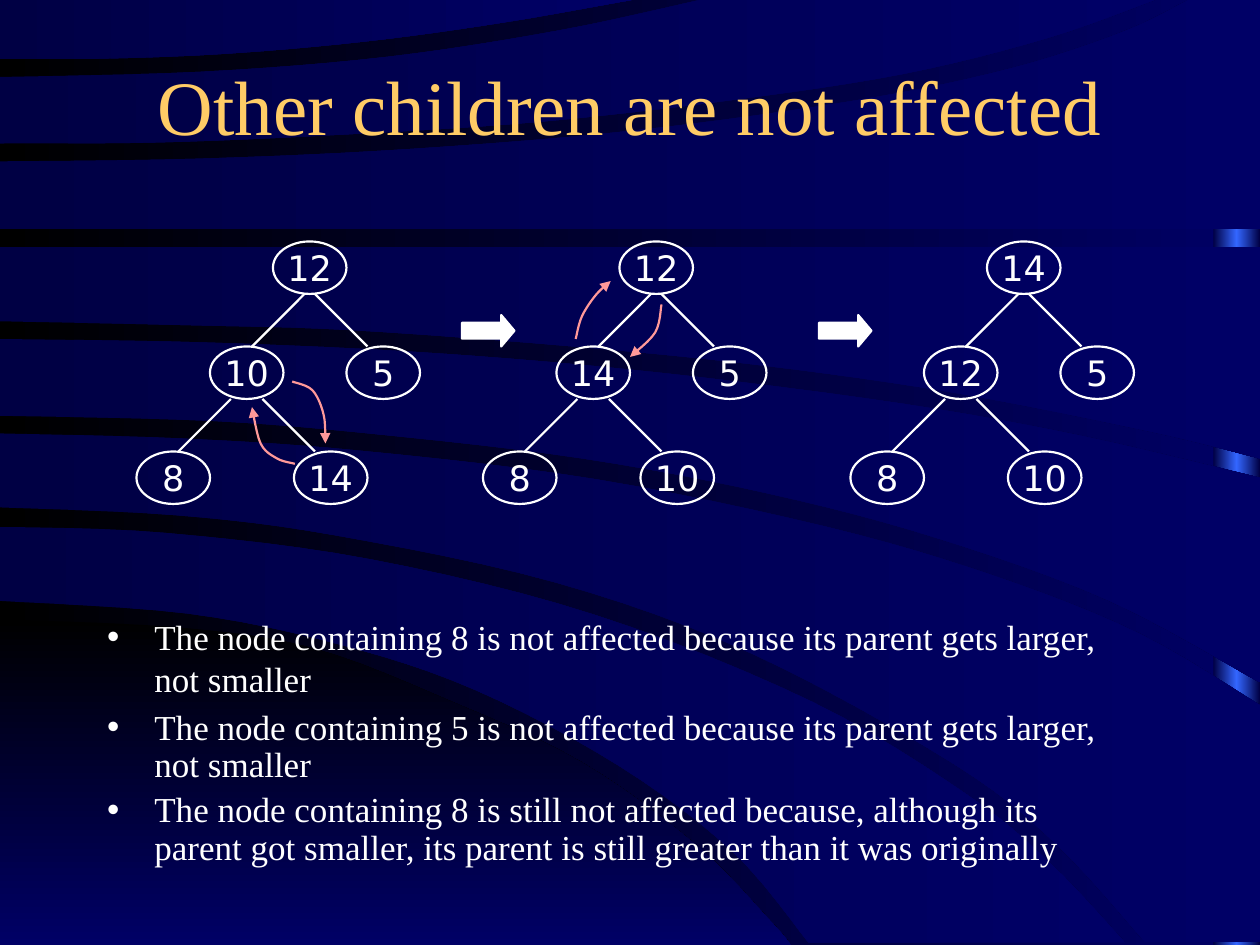
from copy import deepcopy
from lxml.etree import SubElement
from pptx import Presentation
from pptx.dml.color import RGBColor as RGB
from pptx.enum.shapes import MSO_CONNECTOR as LINK, MSO_SHAPE as FORM
from pptx.enum.text import MSO_ANCHOR as ANCHOR, MSO_AUTO_SIZE as FIT, PP_ALIGN as ALIGN
from pptx.oxml.ns import qn
from pptx.util import Pt

BLACK = RGB(0x00, 0x00, 0x00)
NAVY = RGB(0x00, 0x00, 0x44)
BLUE = RGB(0x00, 0x00, 0x66)
GLOW = RGB(0x33, 0x66, 0xFF)
GOLD = RGB(0xFF, 0xCC, 0x66)
PINK = RGB(0xFF, 0x99, 0x99)
WHITE = RGB(0xFF, 0xFF, 0xFF)

# Each band is a list of edges; an edge is a smooth run of points.
HILL = [
    [(0, 354), (100, 358.5), (179, 370.5), (260, 401.8), (333, 436),
     (398, 483), (440, 526), (452, 540)],
    [(0, 540)],
]
BANDS = [
    [[(0, 301), (94, 304.5), (212, 319.7), (340, 351.4), (464, 401),
      (552, 453.6), (600, 493), (643, 538.6)],
     [(462, 538.6), (419, 487), (354, 437.8), (271, 394), (193, 368),
      (107, 350.6), (0, 343.4)]],
    [[(0, 247.7), (104, 250.6), (208, 257.8), (341, 274), (472, 301),
      (568, 329), (651, 362), (720, 403)],
     [(720, 538.6)],
     [(654.5, 538.6), (603, 482), (544, 436), (430, 373.7), (318, 333),
      (192, 306), (101, 294.5), (0, 290)]],
    [[(0, 193.7), (121, 195.8), (251, 202), (377, 213), (514, 230.4),
      (618, 249), (720, 273)],
     [(720, 390), (634, 343.4), (535, 307.4), (439, 282), (333, 262),
      (218, 248.4), (120, 240.5), (0, 237.6)]],
    [[(0, 141), (720, 141)],
     [(720, 262), (659, 247), (546, 224.6), (437, 209), (328, 198),
      (200, 188.6), (106, 185.8), (0, 183.6)]],
    [[(0, 92.2), (113, 90.7), (237, 85), (366, 74.2), (492, 56.9),
      (578, 38.9), (642, 18), (679, 0)],
     [(720, 0)], [(720, 131)], [(0, 131)]],
    [[(0, 44), (115, 41), (222, 32.4), (320, 17.3), (400, 0)],
     [(660, 0), (598, 22), (515, 42.5), (415, 57.6), (306, 69.8),
      (194, 77), (91, 81.4), (0, 82)]],
    [[(0, 0)],
     [(361, 0), (287, 13), (208, 23.8), (125, 31), (48, 33.8), (0, 33.8)]],
]

# Left and top of each node, and the ends of each link, within a tree.
SPOTS = [(78, 0), (42, 60), (120, 60), (0, 120), (90, 120)]
LINKS = [(96, 30, 66, 60), (102, 30, 132, 60), (54, 90, 24, 120), (72, 90, 102, 120)]
TREES = [(78, (12, 10, 5, 8, 14)), (276, (12, 14, 5, 8, 10)), (486, (14, 12, 5, 8, 10))]
SWAPS = [
    [[(168.5, 265), (158.4, 262), (149, 253.5), (144, 232.6)],
     [(167, 218), (178.6, 223), (185, 237), (186, 253.4)]],
    [[(329, 193.7), (332.6, 180.7), (340.6, 168.5), (349, 160.6)],
     [(378, 174), (374.4, 190), (360, 204)]],
]


def smooth(knots, steps=6):
    """Points on a Catmull-Rom curve through the knots."""
    ends = [knots[0], *knots, knots[-1]]
    out = [knots[0]]
    for a, b, c, d in zip(ends, ends[1:], ends[2:], ends[3:]):
        for n in range(1, steps + 1):
            t = n / steps
            out.append(tuple(
                (2 * q + (r - p) * t + (2 * p - 5 * q + 4 * r - s) * t**2
                 + (3 * q - p - 3 * r + s) * t**3) / 2
                for p, q, r, s in zip(a, b, c, d)))
    return out


def blend(fill, *hues, angle=0):
    """Fill with evenly spaced gradient stops."""
    fill.gradient()
    fill.gradient_angle = angle
    stops = fill._xPr.find(".//" + qn("a:gsLst"))
    while len(stops) < len(hues):
        stops.append(deepcopy(stops[0]))
    for n, (stop, hue) in enumerate(zip(fill.gradient_stops, hues)):
        stop.color.rgb = hue
        stop.position = n / (len(hues) - 1)


class Deck:
    serif, sans = "Times New Roman", "DejaVu Sans"
    size, weight = Pt(20), Pt(1.25)

    def __init__(self, slide):
        self.slide = slide
        self.area = slide.shapes

    def group(self):
        """Send the next elements to a new group."""
        self.area = self.slide.shapes.add_group_shape().shapes

    def ungroup(self):
        self.area = self.slide.shapes

    def pen(self, line, hue=WHITE):
        line.color.rgb = hue
        line.width = self.weight

    def shape(self, form, x, y, w, h):
        item = self.area.add_shape(form, Pt(x), Pt(y), Pt(w), Pt(h))
        item.shadow.inherit = False
        return item

    def trace(self, points, close):
        first, *rest = [(Pt(x), Pt(y)) for x, y in points]
        pen = self.area.build_freeform(*first)
        pen.add_line_segments(rest, close=close)
        item = pen.convert_to_shape()
        item.shadow.inherit = False
        return item

    def band(self, edges, *hues, angle=0):
        item = self.trace([p for edge in edges for p in smooth(edge)], True)
        blend(item.fill, *hues, angle=angle)
        item.line.fill.background()

    def stripe(self):
        item = self.shape(FORM.RECTANGLE, 693.4, 0, 26.6, 540)
        blend(item.fill, NAVY, GLOW, NAVY)
        item.line.fill.background()

    def place(self, slot, x, y, w, h):
        """Move a placeholder and bring it to the front."""
        item = self.slide.placeholders[slot]
        item.left, item.top, item.width, item.height = Pt(x), Pt(y), Pt(w), Pt(h)
        self.slide.shapes._spTree.append(item._element)
        item.text_frame.auto_size = FIT.NONE
        return item.text_frame

    def style(self, para, hue, face, size):
        para.font.name, para.font.size, para.font.color.rgb = face, size, hue

    def title(self, text, *box):
        frame = self.place(0, *box)
        frame.text = text
        frame.vertical_anchor = ANCHOR.MIDDLE
        para = frame.paragraphs[0]
        para.alignment = ALIGN.CENTER
        self.style(para, GOLD, self.serif, Pt(44))

    def bullets(self, slot, lines, space, *box):
        frame = self.place(slot, *box)
        frame.text = "\n".join(lines)
        for para in frame.paragraphs:
            self.style(para, WHITE, self.serif, self.size)
            para.space_before, para.line_spacing = Pt(4), space
            props = para._p.get_or_add_pPr()
            props.set("marL", str(Pt(27)))
            props.set("indent", str(-Pt(27)))

    def node(self, text, x, y):
        item = self.shape(FORM.OVAL, x, y, 42, 30)
        item.fill.background()
        self.pen(item.line)
        frame = item.text_frame
        frame.text, frame.word_wrap = str(text), False
        frame.vertical_anchor = ANCHOR.MIDDLE
        para = frame.paragraphs[0]
        para.alignment = ALIGN.CENTER
        self.style(para, WHITE, self.sans, self.size)

    def link(self, *ends):
        item = self.area.add_connector(LINK.STRAIGHT, *map(Pt, ends))
        self.pen(item.line)
        SubElement(item._element.spPr, qn("a:effectLst"))

    def tree(self, left, keys, top=138):
        self.group()
        for key, (x, y) in zip(keys, SPOTS):
            self.node(key, left + x, top + y)
        for x1, y1, x2, y2 in LINKS:
            self.link(left + x1, top + y1, left + x2, top + y2)
        self.ungroup()

    def swap(self, curves):
        self.group()
        for knots in curves:
            item = self.trace(smooth(knots), False)
            item.fill.background()
            self.pen(item.line, PINK)
            SubElement(item.line._get_or_add_ln(), qn("a:tailEnd"), type="triangle")
        self.ungroup()

    def arrow(self, x):
        item = self.shape(FORM.RIGHT_ARROW, x, 180, 30, 18)
        item.adjustments[1] = 0.42
        item.fill.solid()
        item.fill.fore_color.rgb = WHITE
        self.pen(item.line)


def main():
    show = Presentation()
    show.slide_width, show.slide_height = Pt(720), Pt(540)
    deck = Deck(show.slides.add_slide(show.slide_layouts[3]))
    blend(deck.slide.background.fill, BLACK, BLUE)
    deck.stripe()
    deck.band(HILL, BLACK, BLUE, angle=270)
    for edges in BANDS:
        deck.band(edges, NAVY, BLUE)
    deck.title("Other children are not affected", 24, 30, 672, 60)
    deck.bullets(1, [
        "The node containing 8 is not affected because its parent gets larger, not smaller",
    ], 1.0, 54, 348, 588, 58)
    deck.bullets(2, [
        "The node containing 5 is not affected because its parent gets larger, not smaller",
        "The node containing 8 is still not affected because, although its parent got "
        "smaller, its parent is still greater than it was originally",
    ], 0.9, 54, 402, 600, 102)
    for left, keys in TREES:
        deck.tree(left, keys)
    for x in (264, 468):
        deck.arrow(x)
    for curves in SWAPS:
        deck.swap(curves)
    show.save("out.pptx")


if __name__ == "__main__":
    main()
